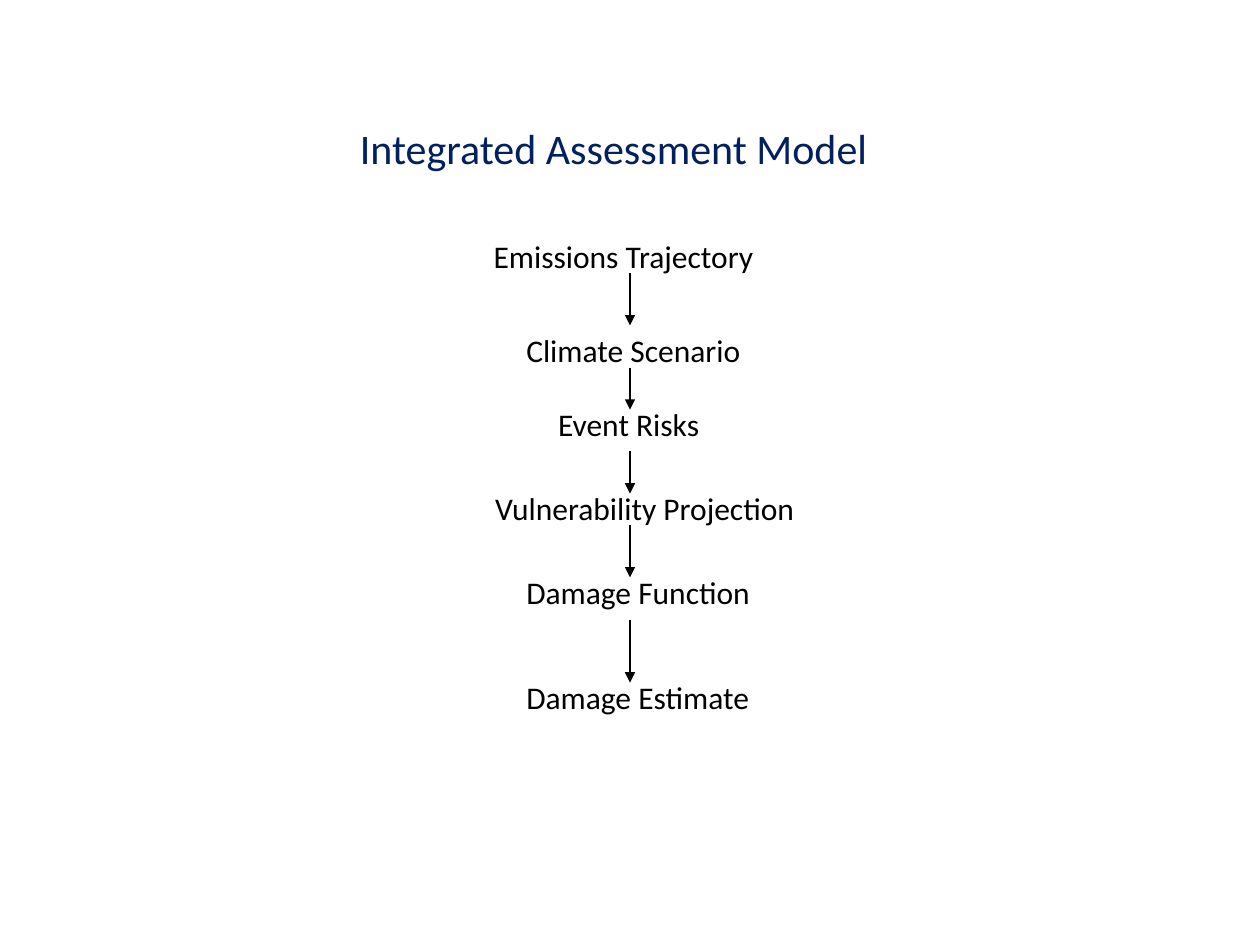
from dataclasses import dataclass

from lxml import etree
from pptx import Presentation
from pptx.dml.color import RGBColor
from pptx.enum import shapes, text
from pptx.oxml.ns import qn
from pptx.util import Cm, Pt


@dataclass(frozen=True)
class Theme:
    font: str = "Calibri"
    ink: str = "000000"
    heading: str = "002060"
    paper: str = "FFFFFF"
    heading_size: float = 24
    step_size: float = 18
    arrow_width: float = 0.75


@dataclass(frozen=True)
class Step:
    """A model stage; lengths are in centimetres."""
    label: str
    left: float
    top: float
    width: float


@dataclass(frozen=True)
class Arrow:
    top: float
    bottom: float


THEME = Theme()
AXIS_X = 12.7
STEP_HEIGHT = 1.02

STEPS = (
    Step("Emissions Trajectory", 9.7, 4.65, 6.4),
    Step("Climate Scenario", 10.36, 6.55, 7.82),
    Step("Event Risks", 11, 8.05, 5.08),
    Step("Vulnerability Projection", 9.73, 9.73, 9.68),
    Step("Damage Function", 10.36, 11.43, 8.05),
    Step("Damage Estimate", 10.36, 13.54, 7.42),
)
ARROWS = (
    Arrow(5.5, 6.56),
    Arrow(7.41, 8.26),
    Arrow(9.1, 9.95),
    Arrow(10.58, 11.64),
    Arrow(12.49, 13.76),
)


def write(shape, words: str, *, size: float, color: str) -> None:
    frame = shape.text_frame
    frame.word_wrap = True
    frame.auto_size = text.MSO_AUTO_SIZE.NONE
    frame.vertical_anchor = text.MSO_ANCHOR.TOP
    paragraph = frame.paragraphs[0]
    paragraph.alignment = text.PP_ALIGN.LEFT
    run = paragraph.add_run()
    run.text = words
    run.font.name = THEME.font
    run.font.size = Pt(size)
    run.font.color.rgb = RGBColor.from_string(color)


def add_heading(slide, words: str) -> None:
    heading = slide.shapes.title
    heading.left, heading.top = Cm(7), Cm(2.34)
    heading.width, heading.height = Cm(12.9), Cm(1.3)
    write(heading, words, size=THEME.heading_size, color=THEME.heading)


def add_step(slide, step: Step) -> None:
    box = slide.shapes.add_textbox(
        Cm(step.left), Cm(step.top), Cm(step.width), Cm(STEP_HEIGHT))
    write(box, step.label, size=THEME.step_size, color=THEME.ink)


def add_arrow(slide, arrow: Arrow) -> None:
    connector = slide.shapes.add_connector(
        shapes.MSO_CONNECTOR.STRAIGHT,
        Cm(AXIS_X), Cm(arrow.top), Cm(AXIS_X), Cm(arrow.bottom))
    connector.line.color.rgb = RGBColor.from_string(THEME.ink)
    connector.line.width = Pt(THEME.arrow_width)
    properties = connector.line._get_or_add_ln().getparent()
    etree.SubElement(properties.find(qn("a:ln")), qn("a:tailEnd"), type="triangle")
    etree.SubElement(properties, qn("a:effectLst"))


def main() -> None:
    deck = Presentation()
    deck.slide_width, deck.slide_height = Cm(25.4), Cm(19.05)
    slide = deck.slides.add_slide(deck.slide_layouts.get_by_name("Title Only"))
    slide.background.fill.solid()
    slide.background.fill.fore_color.rgb = RGBColor.from_string(THEME.paper)

    add_heading(slide, "Integrated Assessment Model")
    for step in STEPS:
        add_step(slide, step)
    for arrow in ARROWS:
        add_arrow(slide, arrow)
    deck.save("out.pptx")


if __name__ == "__main__":
    main()
